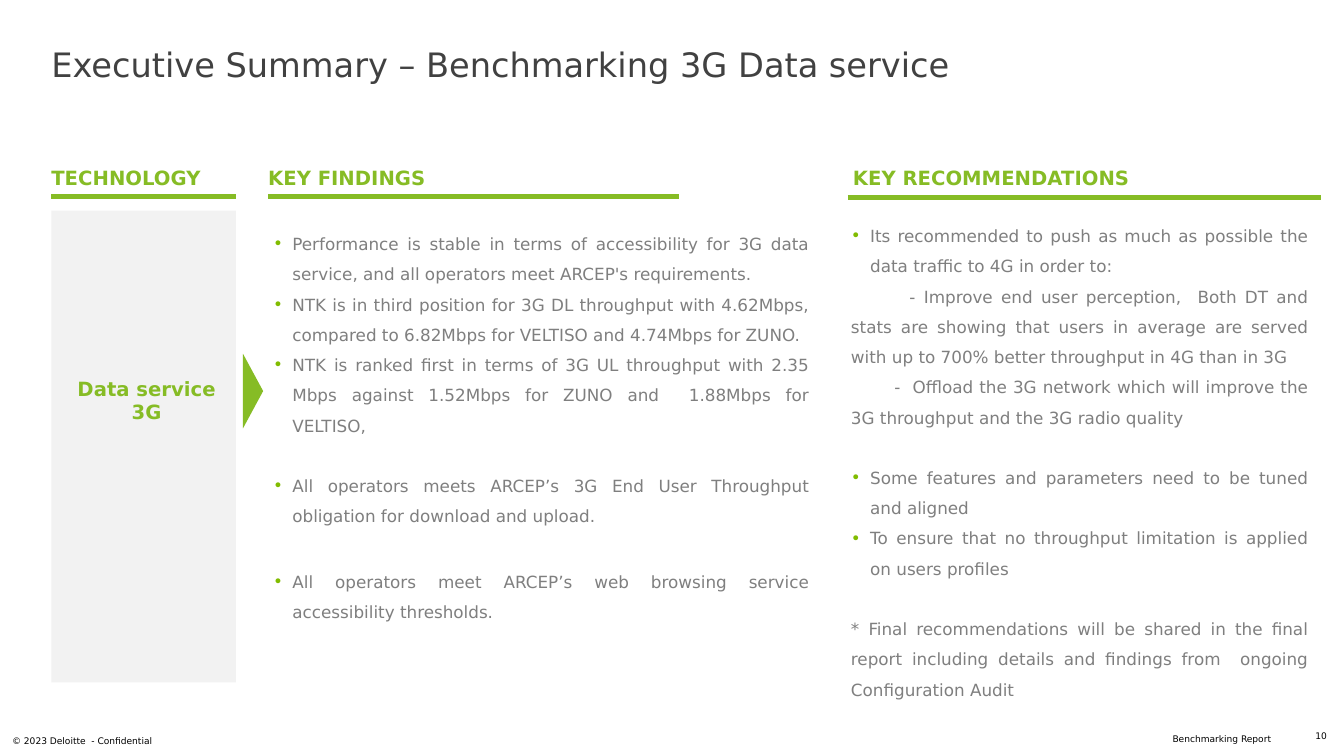
from lxml.etree import SubElement
from pptx import Presentation
from pptx.dml.color import RGBColor
from pptx.enum.shapes import MSO_CONNECTOR as Line, MSO_SHAPE as Preset
from pptx.enum.text import MSO_ANCHOR as Anchor, MSO_AUTO_SIZE as AutoSize, PP_ALIGN as Align
from pptx.oxml.ns import qn
from pptx.util import Inches, Pt

TITLE = "Executive Summary – Benchmarking 3G Data service"
SERVICE = "Data service 3G"

# heading, text left, rule left, rule right, rule height
HEADINGS = [
    ("TECHNOLOGY", 0.51, 0.51, 2.34, 1.95),
    ("KEY FINDINGS", 2.66, 2.66, 6.73, 1.95),
    ("KEY RECOMMENDATIONS", 8.46, 8.41, 13.1, 1.96),
]

# text, bulleted, first-line indent in inches, space before in points
FINDINGS = [
    ("Performance is stable in terms of accessibility for 3G data service, "
     "and all operators meet ARCEP's requirements.", True, 0, 0),
    ("NTK is in third position for 3G DL throughput with 4.62Mbps, "
     "compared to 6.82Mbps for VELTISO and 4.74Mbps for ZUNO.", True, 0, 0),
    ("NTK is ranked first in terms of 3G UL throughput with 2.35 Mbps "
     "against 1.52Mbps for ZUNO and  1.88Mbps for VELTISO,", True, 0, 0),
    ("All operators meets ARCEP’s 3G End User Throughput obligation "
     "for download and upload.", True, 0, 21.6),
    ("All operators meet ARCEP’s web browsing service accessibility thresholds.",
     True, 0, 25),
]
RECOMMENDATIONS = [
    ("Its recommended to push as much as possible the data traffic to 4G in order to:",
     True, 0, 0),
    ("- Improve end user perception,  Both DT and stats are showing that users in "
     "average are served with up to 700% better throughput in 4G than in 3G",
     False, 0.58, 0),
    ("-  Offload the 3G network which will improve the 3G throughput and the 3G "
     "radio quality", False, 0.43, 0),
    ("Some features and parameters need to be tuned and aligned", True, 0, 21.6),
    ("To ensure that no throughput limitation is applied on users profiles", True, 0, 0),
    ("* Final recommendations will be shared in the final report including details "
     "and findings from  ongoing Configuration Audit", False, 0, 21.6),
]
# placeholder index, area, top inset, paragraphs
LISTS = [
    (1, (2.61, 1.67, 5.52, 5.1), 0.55, FINDINGS),
    (2, (8.34, 2.09, 4.74, 4.43), 0.05, RECOMMENDATIONS),
]
FOOTERS = [
    ("© 2023 Deloitte  - Confidential", (0.12, 7.3, 4.5, 0.11), Align.LEFT),
    ("Benchmarking Report", (11.63, 7.28, 1.7, 0.11), Align.LEFT),
    ("10", (12.82, 7.25, 0.34, 0.11), Align.RIGHT),
]

FONT = "DejaVu Sans"
GREEN = RGBColor(0x86, 0xBC, 0x25)
BULLET_GREEN = RGBColor(0x81, 0xBC, 0x00)
PANEL = RGBColor(0xF2, 0xF2, 0xF2)
DARK = RGBColor(0x41, 0x41, 0x41)
GREY = RGBColor(0x7F, 0x7F, 0x7F)
BLACK = RGBColor(0, 0, 0)
HANG = 0.19


def place(shape, area):
    shape.left, shape.top, shape.width, shape.height = map(Inches, area)


def prepare(frame, insets=(0, 0, 0, 0), anchor=Anchor.TOP):
    frame.word_wrap = True
    frame.auto_size = AutoSize.NONE
    frame.vertical_anchor = anchor
    (frame.margin_left, frame.margin_top,
     frame.margin_right, frame.margin_bottom) = map(Inches, insets)


def write(para, text, size, color, bold=False, align=Align.LEFT):
    para.alignment = align
    span = para.add_run()
    span.text = text
    span.font.name = FONT
    span.font.size = Pt(size)
    span.font.bold = bold
    span.font.color.rgb = color


def add_label(page, area, text, size, color, bold=False, align=Align.LEFT):
    box = page.shapes.add_textbox(*map(Inches, area))
    prepare(box.text_frame)
    para = box.text_frame.paragraphs[0]
    write(para, text, size, color, bold, align)
    return para


def add_solid(page, preset, area, color):
    shape = page.shapes.add_shape(preset, *map(Inches, area))
    shape.shadow.inherit = False
    shape.fill.solid()
    shape.fill.fore_color.rgb = color
    shape.line.fill.background()
    return shape


def add_rule(page, left, right, height):
    rule = page.shapes.add_connector(
        Line.STRAIGHT, Inches(left), Inches(height), Inches(right), Inches(height))
    rule.line.color.rgb = GREEN
    rule.line.width = Pt(3)
    SubElement(rule._element.spPr, qn("a:effectLst"))


def set_bullet(para, bulleted, first_indent):
    props = para._p.get_or_add_pPr()
    left, indent = (HANG, -HANG) if bulleted else (0, first_indent)
    props.set("marL", str(Inches(left)))
    props.set("indent", str(Inches(indent)))
    if bulleted:
        color = SubElement(props, qn("a:buClr"))
        SubElement(color, qn("a:srgbClr"), val=str(BULLET_GREEN))
        SubElement(props, qn("a:buFont"), typeface=FONT)
        SubElement(props, qn("a:buChar"), char="•")
    else:
        SubElement(props, qn("a:buNone"))


def fill_list(holder, area, top_inset, items):
    place(holder, area)
    frame = holder.text_frame
    prepare(frame, (0.1, top_inset, 0.1, 0.05))
    for number, (text, bulleted, first_indent, gap) in enumerate(items):
        para = frame.add_paragraph() if number else frame.paragraphs[0]
        set_bullet(para, bulleted, first_indent)
        para.line_spacing = 1.5
        para.space_before = Pt(gap)
        write(para, text, 12, GREY, align=Align.JUSTIFY)


def main():
    deck = Presentation()
    deck.slide_width, deck.slide_height = Inches(13.33), Inches(7.5)
    page = deck.slides.add_slide(deck.slide_layouts[3])

    title = page.shapes.title
    place(title, (0.51, 0.44, 12.31, 0.37))
    prepare(title.text_frame)
    write(title.text_frame.paragraphs[0], TITLE, 24, DARK)

    panel = add_solid(page, Preset.RECTANGLE, (0.51, 2.09, 1.83, 4.68), PANEL)
    prepare(panel.text_frame, (0.14, 0.08, 0.08, 1), Anchor.MIDDLE)
    write(panel.text_frame.paragraphs[0], SERVICE, 14, GREEN, True, Align.CENTER)

    pointer = add_solid(page, Preset.ISOSCELES_TRIANGLE, (2.14, 3.78, 0.74, 0.2), GREEN)
    pointer.rotation = 90

    for text, left, rule_left, rule_right, height in HEADINGS:
        heading = add_label(page, (left, 1.67, 4, 0.21), text, 14, GREEN, True)
        heading.line_spacing = 0.9
        add_rule(page, rule_left, rule_right, height)

    for index, area, top_inset, items in LISTS:
        fill_list(page.placeholders[index], area, top_inset, items)

    for text, area, align in FOOTERS:
        add_label(page, area, text, 6.5, BLACK, align=align)

    deck.save("out.pptx")


if __name__ == "__main__":
    main()
